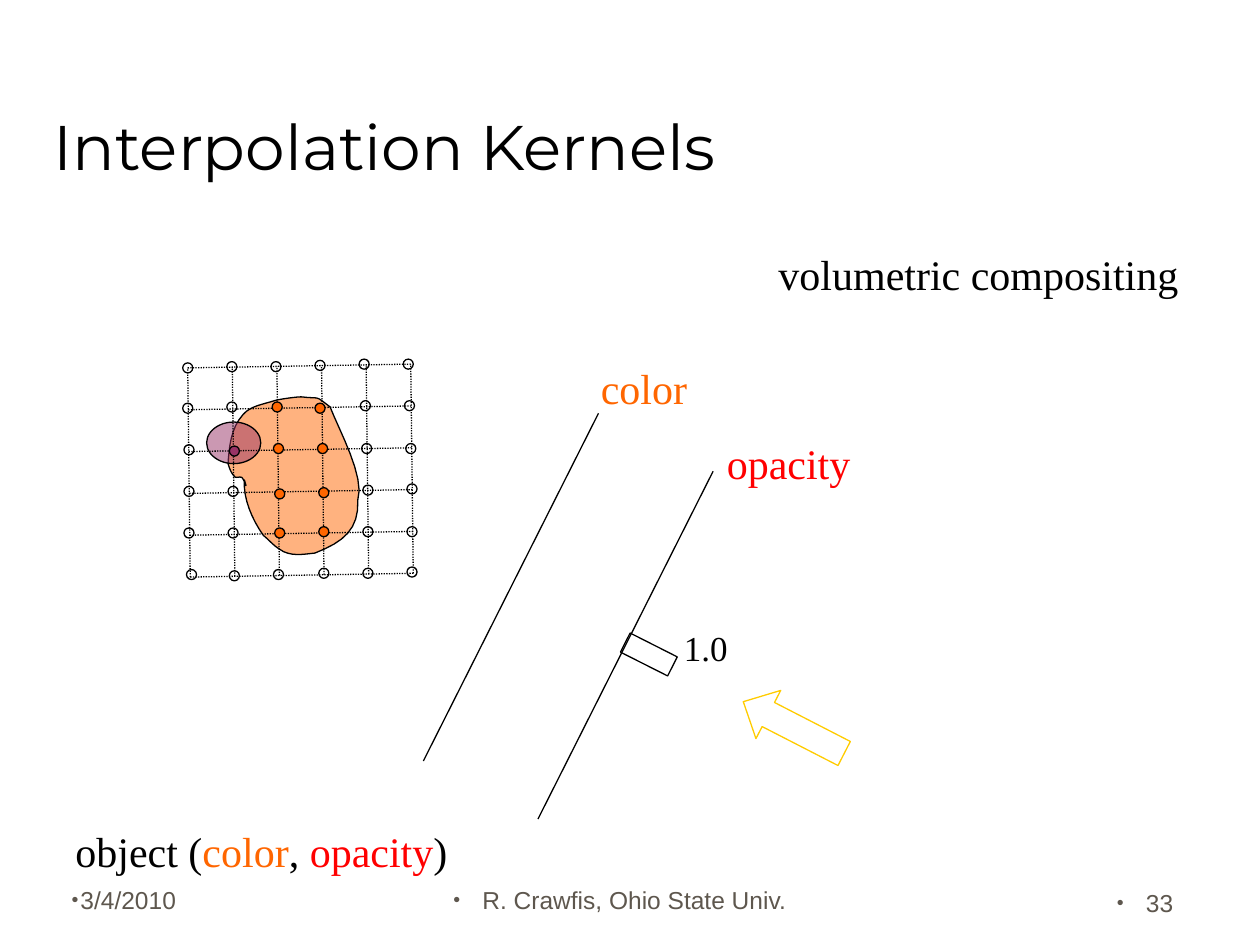
from dataclasses import dataclass

from lxml.etree import SubElement as Sub
from pptx import Presentation
from pptx.dml.color import RGBColor as RGB
from pptx.enum.dml import MSO_LINE as Dash
from pptx.enum.shapes import MSO_CONNECTOR as Conn, MSO_SHAPE as Kind
from pptx.enum.text import MSO_ANCHOR as Anchor, PP_ALIGN as Align
from pptx.oxml.ns import qn
from pptx.util import Pt

SCALE = 9144  # EMU per px, 100 px to the inch


@dataclass(frozen=True)
class Theme:
    ink: str = "000000"
    gray: str = "5E574E"
    orange: str = "FF6600"
    red: str = "FF0000"
    plum: str = "993366"
    gold: str = "FFCC00"
    head: str = "Montserrat"
    body: str = "Times New Roman"
    foot: str = "Arial"
    title: int = 36
    label: int = 24
    value: int = 20
    small: int = 14
    line: float = 0.75


T = Theme()

# Node offsets, one row of the grid a line
NODES = [
    [(0, 3), (35, 2), (70, 2), (105, 1), (140, 0), (175, 0)],
    [(0, 35), (35, 34), (71, 34), (105, 35), (141, 33), (176, 33)],
    [(1, 68), (37, 69), (72, 67), (107, 67), (142, 67), (177, 67)],
    [(1, 101), (36, 101), (73, 103), (108, 102), (143, 100), (178, 99)],
    [(1, 134), (36, 134), (73, 134), (108, 133), (143, 133), (178, 133)],
    [(3, 167), (37, 168), (72, 167), (108, 166), (143, 166), (178, 165)],
]
# Object outline: start point, then Bezier triples
START = (49, 96)
CURVES = [
    [(48, 111), (55, 127), (64, 140)],
    [(68, 143), (72, 148), (77, 151)],
    [(85, 157), (96, 155), (105, 154)],
    [(128, 145), (140, 135), (139, 112)],
    [(145, 94), (124, 56), (117, 38)],
    [(104, 28), (110, 32), (94, 30)],
    [(90, 30), (76, 32), (73, 33)],
    [(64, 36), (54, 37), (48, 44)],
    [(38, 55), (37, 70), (36, 83)],
    [(37, 86), (38, 90), (41, 93)],
    [(42, 95), (45, 93), (47, 94)],
    [(49, 96), (52, 106), (49, 96)],
]


def px(*vals):
    return [round(v * SCALE) for v in vals]


def paint(shape, fill=None, line=T.ink, alpha=None):
    shape.shadow.inherit = False
    if fill:
        shape.fill.solid()
        shape.fill.fore_color.rgb = RGB.from_string(fill)
        if alpha:
            color = shape.fill._xPr.find(qn("a:solidFill"))[0]
            Sub(color, qn("a:alpha"), val=str(alpha * 1000))
    else:
        shape.fill.background()
    shape.line.color.rgb = RGB.from_string(line)
    shape.line.width = Pt(T.line)


def draw(slide, kind, box, turn=0, **look):
    shape = slide.shapes.add_shape(kind, *px(*box))
    shape.rotation = turn
    paint(shape, **look)
    return shape


def rule(slide, start, end, dash=None):
    line = slide.shapes.add_connector(Conn.STRAIGHT, *px(*start, *end))
    line.line.color.rgb = RGB.from_string(T.ink)
    line.line.width = Pt(T.line)
    if dash:
        line.line.dash_style = dash
    Sub(line._element.spPr, qn("a:effectLst"))


def mark(para, hang, right):
    """Give the paragraph a small bullet with a hanging indent."""
    props = para._p.get_or_add_pPr()
    for name, val in zip(("marL", "indent", "marR"), px(hang, -hang, right)):
        props.set(name, str(val))
    Sub(props, qn("a:buSzPct"), val="80000")
    Sub(props, qn("a:buFont"), typeface=T.foot)
    Sub(props, qn("a:buChar"), char="•")


def write(slide, box, parts, size=T.label, font=T.body,
          align=Align.LEFT, anchor=Anchor.TOP, bullet=None):
    """Place one paragraph made of (text, colour) parts."""
    frame = slide.shapes.add_textbox(*px(*box)).text_frame
    frame.word_wrap = True
    frame.vertical_anchor = anchor
    para = frame.paragraphs[0]
    para.alignment = align
    if bullet:
        mark(para, *bullet)
    for text, color in parts:
        run = para.add_run()
        run.text = text
        run.font.name = font
        run.font.size = Pt(size)
        run.font.color.rgb = RGB.from_string(color)


def blob(slide, x, y):
    def at(point):
        return px(x + point[0], y + point[1])

    steps, here, points = 8, START, []
    for one, two, end in CURVES:
        for i in range(1, steps + 1):
            t = i / steps
            u = 1 - t
            points.append(at([
                u**3 * a + 3 * u * u * t * b + 3 * u * t * t * c + t**3 * d
                for a, b, c, d in zip(here, one, two, end)]))
        here = end
    pen = slide.shapes.build_freeform(*at(START))
    pen.add_line_segments(points, close=True)
    paint(pen.convert_to_shape(), fill=T.orange, alpha=50)


def volume(slide, x, y):
    """Object, kernel and the slightly skewed sampling grid."""
    def cross(col, row):
        return (x + 4 + 35.4 * col + 0.4 * row,
                y + 7 - 0.6 * col + 33.2 * row)

    blob(slide, x, y)
    draw(slide, Kind.OVAL, (x + 19, y + 50, 43, 33), fill=T.plum, alpha=50)
    last = len(NODES) - 1
    for i in range(last + 1):
        rule(slide, cross(i, last), cross(i, 0), Dash.ROUND_DOT)
        rule(slide, cross(0, i), cross(last, i), Dash.ROUND_DOT)
    for r, row in enumerate(NODES):
        for c, (dx, dy) in enumerate(row):
            fill = None
            if (r, c) == (2, 1):
                fill = T.plum
            elif 1 <= r <= 4 and c in (2, 3):
                fill = T.orange
            draw(slide, Kind.OVAL, (x + dx, y + dy, 8, 8), fill=fill)


def planes(slide, x, y):
    """Color and opacity rays with the sampled value and view arrow."""
    for dx, dy in ((0, 0), (91, 46)):
        rule(slide, (x + 139 + dx, y + 45 + dy), (x + dx, y + 321 + dy))
    write(slide, (x + 131, y, 392, 50), [("color", T.orange)])
    write(slide, (x + 231, y + 59, 392, 50), [("opacity", T.red)])
    draw(slide, Kind.RECTANGLE, (x + 158, y + 228, 42, 17), turn=26.8)
    write(slide, (x + 197, y + 209, 125, 43), [("1.0", T.ink)], T.value)
    arrow = draw(slide, Kind.LEFT_ARROW, (x + 249, y + 273, 90, 43),
                 turn=27.2, line=T.gold)
    arrow.adjustments[1] = 0.52


def footer(slide, x, y):
    for dx, dy, width, text, align, bullet in (
            (0, 0, 208, "3/4/2010", Align.LEFT, (7, 0)),
            (295, 0, 317, "R. Crawfis, Ohio State Univ.", Align.CENTER,
             (23, 17)),
            (686, 2, 208, "33", Align.RIGHT, (23, 0))):
        write(slide, (x + dx, y + dy, width, 50), [(text, T.gray)],
              T.small, T.foot, align, Anchor.BOTTOM, bullet)


def main():
    deck = Presentation()
    deck.slide_width, deck.slide_height = px(1000, 750)
    slide = deck.slides.add_slide(deck.slide_layouts[6])
    write(slide, (33, 25, 933, 125), [("Interpolation Kernels", T.ink)],
          T.title, T.head, anchor=Anchor.BOTTOM)
    write(slide, (608, 192, 362, 50), [("volumetric compositing", T.ink)])
    volume(slide, 145, 285)
    planes(slide, 336, 283)
    write(slide, (50, 650, 325, 50), [
        ("object (", T.ink), ("color", T.orange), (", ", T.ink),
        ("opacity", T.red), (")", T.ink)])
    footer(slide, 47, 681)
    deck.save("out.pptx")


if __name__ == "__main__":
    main()
